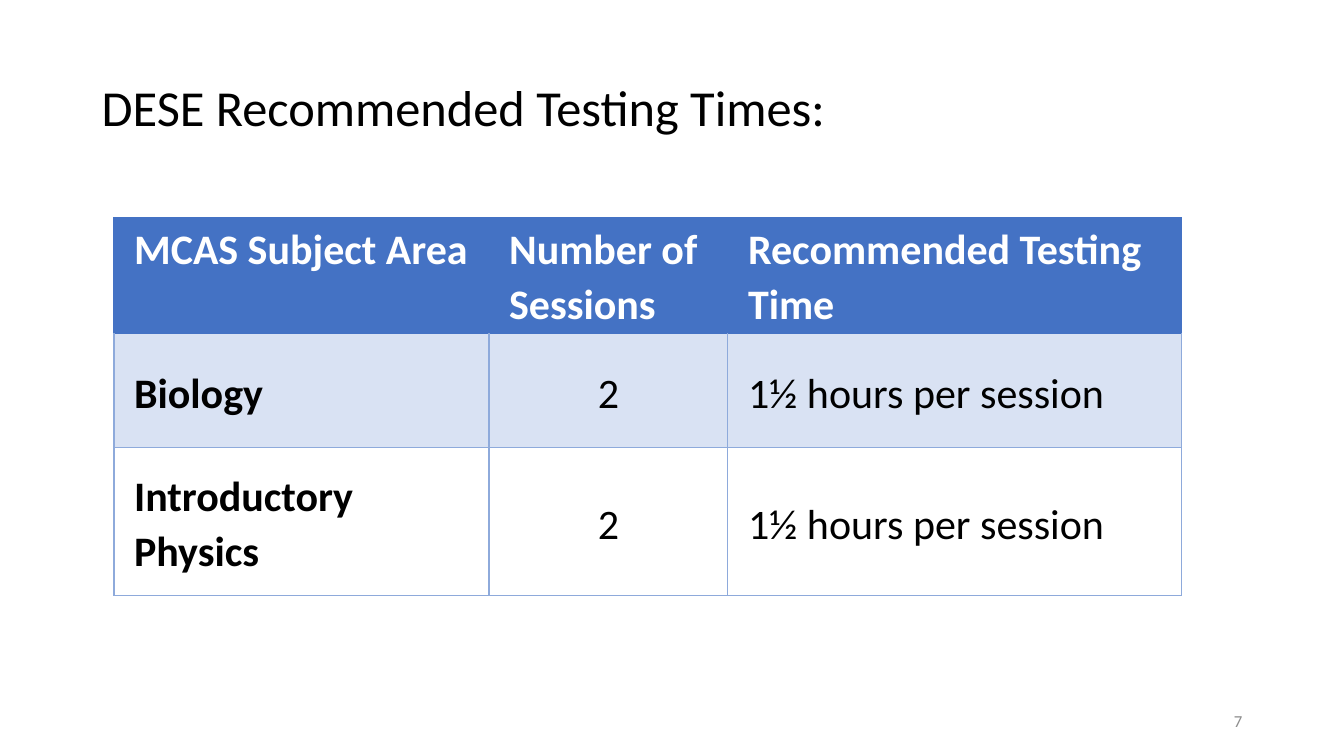
"""Build a slide with a table of recommended testing times."""
import pptx
import pptx.dml.color
import pptx.enum.text
import pptx.oxml
import pptx.oxml.ns
import pptx.util

Inches = pptx.util.Inches
Pt = pptx.util.Pt
Align = pptx.enum.text.PP_ALIGN
Anchor = pptx.enum.text.MSO_ANCHOR

TITLE = "DESE Recommended Testing Times:"
PAGE_NUMBER = "7"
ROWS = [
    ("MCAS Subject Area", "Number of Sessions", "Recommended Testing Time"),
    ("Biology", "2", "1½ hours per session"),
    ("Introductory Physics", "2", "1½ hours per session"),
]
TABLE_LEFT, TABLE_TOP = 1.13, 2.16
COLUMN_WIDTHS = [3.72, 2.37, 4.5]
ROW_HEIGHTS = [1.15, 1.13, 1.47]
COLUMN_ALIGNS = [Align.LEFT, Align.CENTER, Align.LEFT]
HEADER_BLUE, BAND_BLUE, BORDER_BLUE = "4472C4", "D9E2F3", "8EAADB"
ROW_FILLS = [HEADER_BLUE, BAND_BLUE, "FFFFFF"]
CELL_FORMAT = {
    "margin_left": Inches(0.2),
    "margin_right": Inches(0.2),
    "margin_top": Inches(0.03),
    "margin_bottom": 0,
}


def color(value):
    return pptx.dml.color.RGBColor.from_string(value)


def apply(target, values):
    for name, value in values.items():
        setattr(target, name, value)


def write(frame, text, size, shade, bold=False, **paragraph_format):
    para = frame.paragraphs[0]
    apply(para, paragraph_format)
    span = para.add_run()
    span.text = text
    apply(span.font, {"name": "Calibri", "size": Pt(size), "bold": bold})
    span.font.color.rgb = color(shade)


def add_text(page, place, anchor, *content, **paragraph_format):
    box = page.shapes.add_textbox(*map(Inches, place))
    apply(box.text_frame, {"word_wrap": True, "vertical_anchor": anchor})
    write(box.text_frame, *content, **paragraph_format)


def set_borders(cell, shades):
    properties = cell._tc.get_or_add_tcPr()
    for position, (side, shade) in enumerate(shades.items()):
        line = pptx.oxml.parse_xml(
            f'<a:ln{side} {pptx.oxml.ns.nsdecls("a")} w="{Pt(1)}">'
            f'<a:solidFill><a:srgbClr val="{shade}"/></a:solidFill></a:ln{side}>'
        )
        properties.insert(position, line)


def fill_cell(cell, text, row, column):
    header = row == 0
    edge = HEADER_BLUE if header else BORDER_BLUE
    top = HEADER_BLUE if row <= 1 else BORDER_BLUE
    apply(cell, CELL_FORMAT)
    cell.vertical_anchor = Anchor.TOP if header else Anchor.MIDDLE
    cell.fill.solid()
    cell.fill.fore_color.rgb = color(ROW_FILLS[row])
    set_borders(cell, {"L": edge, "R": edge, "T": top, "B": edge})
    write(
        cell.text_frame, text, 30,
        "FFFFFF" if header else "000000",
        bold=header or column == 0,
        alignment=Align.LEFT if header else COLUMN_ALIGNS[column],
        line_spacing=1.07,
    )


def add_times_table(page):
    place = (TABLE_LEFT, TABLE_TOP, sum(COLUMN_WIDTHS), sum(ROW_HEIGHTS))
    table = page.shapes.add_table(
        len(ROWS), len(COLUMN_WIDTHS), *map(Inches, place)
    ).table
    for column, width in zip(table.columns, COLUMN_WIDTHS):
        column.width = Inches(width)
    for row, height in zip(table.rows, ROW_HEIGHTS):
        row.height = Inches(height)
    for row, texts in enumerate(ROWS):
        for column, text in enumerate(texts):
            fill_cell(table.cell(row, column), text, row, column)


def main():
    deck = pptx.Presentation()
    apply(deck, {"slide_width": Inches(13.33), "slide_height": Inches(7.5)})
    page = deck.slides.add_slide(deck.slide_layouts[6])
    add_text(page, (0.91, 0.77, 11.5, 1.24), Anchor.TOP,
             TITLE, 36, "000000", line_spacing=0.9)
    add_text(page, (9.42, 6.95, 3, 0.4), Anchor.MIDDLE,
             PAGE_NUMBER, 12, "8C8C8C", alignment=Align.RIGHT)
    add_times_table(page)
    deck.save("out.pptx")


if __name__ == "__main__":
    main()
